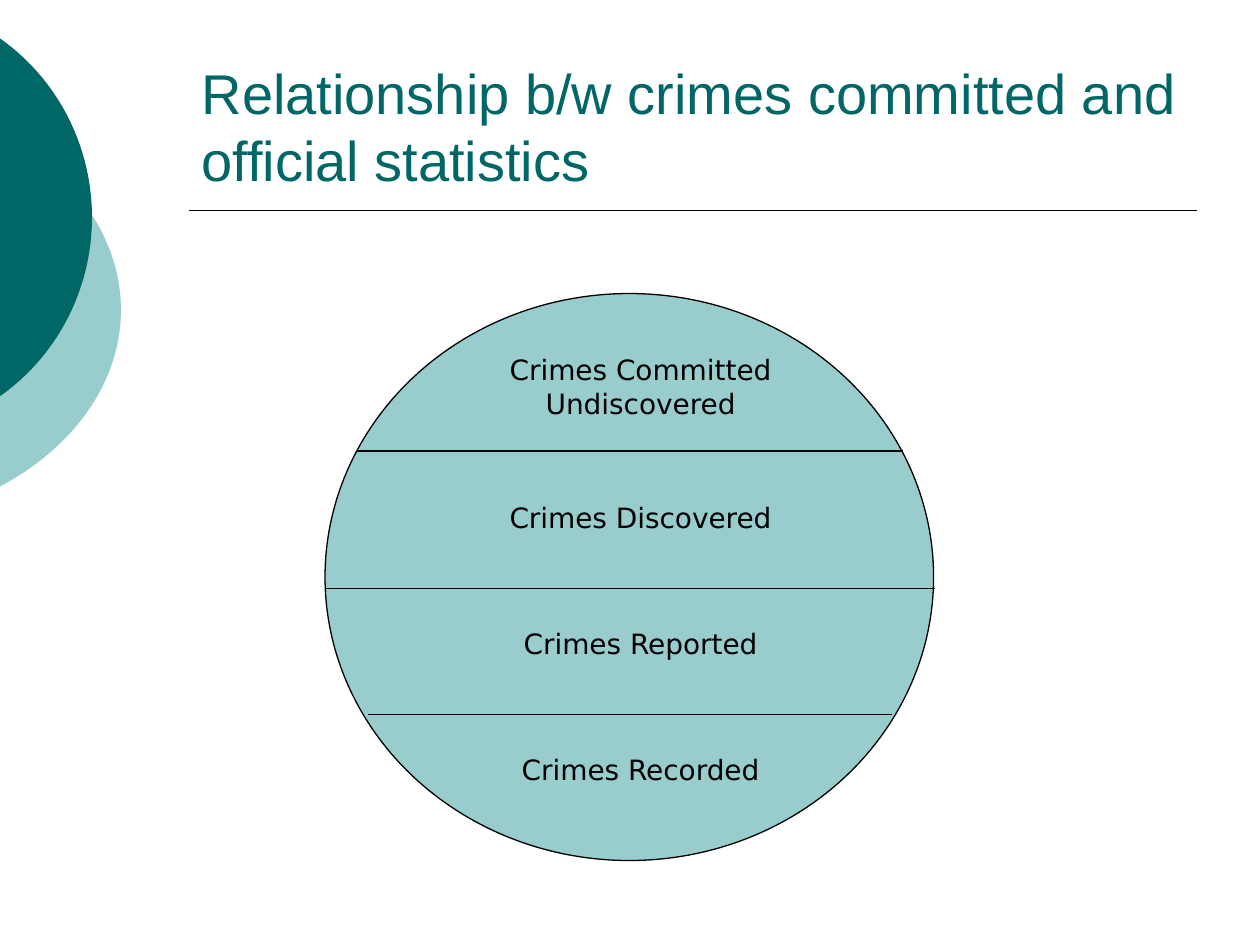
from lxml.etree import SubElement
from pptx import Presentation
from pptx.dml.color import RGBColor
from pptx.enum.shapes import MSO_CONNECTOR, MSO_SHAPE
from pptx.enum.text import MSO_ANCHOR, MSO_AUTO_SIZE, PP_ALIGN
from pptx.oxml.ns import qn
from pptx.util import Inches, Pt

TEAL = RGBColor(0x00, 0x66, 0x66)
AQUA = RGBColor(0x99, 0xCC, 0xCC)
BLACK = RGBColor(0, 0, 0)

# Left, top, width, height, fill: circles cut by the slide's left edge
EDGE_CIRCLES = [
    (-3.54, 0.75, 4.5, 3.42, AQUA),
    (-2.65, 0, 3.38, 3.45, TEAL),
]
CRIME_OVAL = (2.58, 2.33, 4.83, 4.5, AQUA)
# Left, right and height of each line across the oval
DIVIDERS = [(2.92, 7.08, 5.67), (2.58, 7.42, 4.67), (2.83, 7.17, 3.58)]
# Label, top, height
STAGES = [
    ("Crimes Committed Undiscovered", 2.75, 0.64),
    ("Crimes Discovered", 3.92, 0.37),
    ("Crimes Reported", 4.92, 0.37),
    ("Crimes Recorded", 5.92, 0.37),
]


def set_font(paragraph, color, **values):
    for name, value in values.items():
        setattr(paragraph.font, name, value)
    paragraph.font.color.rgb = color


def add_oval(slide, left, top, width, height, color, outlined=False):
    oval = slide.shapes.add_shape(
        MSO_SHAPE.OVAL, Inches(left), Inches(top), Inches(width), Inches(height)
    )
    oval.shadow.inherit = False
    oval.fill.solid()
    oval.fill.fore_color.rgb = color
    if outlined:
        oval.line.color.rgb = BLACK
        oval.line.width = Pt(0.75)
    else:
        oval.line.fill.background()


def add_rule(slide, left, right, height, width):
    rule = slide.shapes.add_connector(
        MSO_CONNECTOR.STRAIGHT, Inches(left), Inches(height), Inches(right), Inches(height)
    )
    rule.line.color.rgb = BLACK
    rule.line.width = Pt(width)
    # An empty effect list removes the shadow
    SubElement(rule.element.spPr, qn("a:effectLst"))


def add_label(slide, text, top, height):
    label = slide.shapes.add_textbox(Inches(3.92), Inches(top), Inches(2.33), Inches(height))
    frame = label.text_frame
    frame.word_wrap = True
    frame.auto_size = MSO_AUTO_SIZE.SHAPE_TO_FIT_TEXT
    frame.text = text
    paragraph = frame.paragraphs[0]
    paragraph.alignment = PP_ALIGN.CENTER
    set_font(paragraph, BLACK, name="DejaVu Sans", size=Pt(16))


def format_title(slide, text):
    title = slide.shapes.title
    place = {"left": 1.5, "top": 0.33, "width": 8, "height": 1.25}
    for name, value in place.items():
        setattr(title, name, Inches(value))
    frame = title.text_frame
    frame.text = text
    frame.word_wrap = True
    frame.auto_size = MSO_AUTO_SIZE.NONE
    frame.vertical_anchor = MSO_ANCHOR.BOTTOM
    paragraph = frame.paragraphs[0]
    paragraph.alignment = PP_ALIGN.LEFT
    set_font(paragraph, TEAL, name="Arial", size=Pt(32))


def main():
    presentation = Presentation()
    presentation.slide_width = Inches(10)
    presentation.slide_height = Inches(7.5)
    slide = presentation.slides.add_slide(presentation.slide_layouts[5])

    # Decoration and title
    for circle in EDGE_CIRCLES:
        add_oval(slide, *circle)
    add_rule(slide, 1.5, 9.5, 1.67, width=1)
    format_title(slide, "Relationship b/w crimes committed and official statistics")

    # Oval divided into stages
    add_oval(slide, *CRIME_OVAL, outlined=True)
    for divider in DIVIDERS:
        add_rule(slide, *divider, width=0.75)
    for stage in STAGES:
        add_label(slide, *stage)

    presentation.save("out.pptx")


if __name__ == "__main__":
    main()
